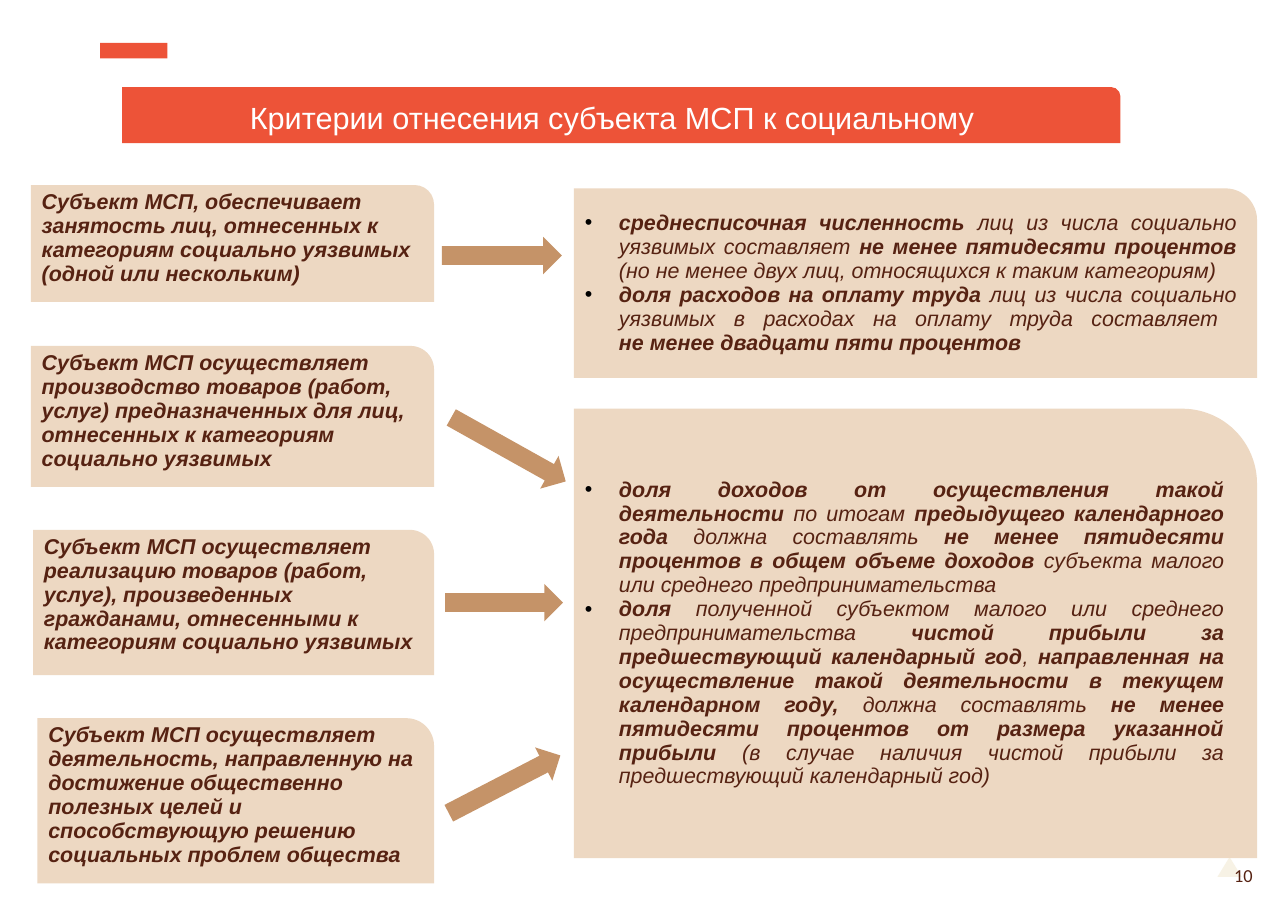
from dataclasses import dataclass

from lxml.etree import SubElement
from pptx import Presentation
from pptx.dml.color import RGBColor
from pptx.enum.shapes import MSO_SHAPE
from pptx.enum.text import MSO_ANCHOR, PP_ALIGN
from pptx.oxml.ns import qn
from pptx.util import Pt

PX = 9144


@dataclass(frozen=True)
class Theme:
    """Colours, fonts and type sizes of the slide."""
    accent: str = "ED5338"
    panel: str = "EDD8C2"
    arrow: str = "C59368"
    ink: str = "562212"
    light: str = "FFFFFF"
    bullet: str = "000000"
    ornament: str = "F7F2E5"
    font: str = "Arial"
    number_font: str = "Calibri"
    title_size: int = 20
    body_size: int = 14
    number_size: int = 12


THEME = Theme()

CRITERIA = [
    ((28, 168, 366, 106),
     "Субъект МСП, обеспечивает занятость лиц, отнесенных к категориям "
     "социально уязвимых (одной или нескольким)"),
    ((28, 314, 366, 128),
     "Субъект МСП осуществляет производство товаров (работ, услуг) "
     "предназначенных для лиц, отнесенных к категориям социально уязвимых"),
    ((30, 481, 364, 132),
     "Субъект МСП осуществляет реализацию товаров (работ, услуг), "
     "произведенных гражданами, отнесенными к категориям социально уязвимых"),
    ((34, 652, 360, 150),
     "Субъект МСП осуществляет деятельность, направленную на достижение "
     "общественно полезных целей и способствующую решению социальных "
     "проблем общества"),
]

CONDITIONS = [
    ((521, 171, 620, 172), [
        "**среднесписочная численность **лиц из числа социально уязвимых "
        "составляет** не менее пятидесяти процентов **(но не менее двух лиц, "
        "относящихся к таким категориям)",
        "**доля расходов на оплату труда **лиц из числа социально уязвимых "
        "в расходах на оплату труда составляет \n"
        "**не менее двадцати пяти процентов**",
    ]),
    ((521, 371, 620, 408), [
        "**доля доходов от осуществления такой деятельности **по итогам "
        "**предыдущего календарного года **должна составлять **не менее "
        "пятидесяти процентов в общем объеме доходов** субъекта малого или "
        "среднего предпринимательства",
        "**доля** полученной субъектом малого или среднего "
        "предпринимательства **чистой прибыли за предшествующий календарный "
        "год**, **направленная на осуществление такой деятельности в текущем "
        "календарном году, **должна составлять **не менее пятидесяти "
        "процентов от размера указанной прибыли **(в случае наличия чистой "
        "прибыли за предшествующий календарный год)",
    ]),
]

ARROWS = [
    ((401, 215, 109, 34), 0),
    ((402, 391, 119, 34), 29.2),
    ((404, 530, 107, 34), 0),
    ((401, 695, 114, 34), 332.6),
]


def emu(box):
    """Turn a box in px into EMU lengths."""
    return [v * PX for v in box]


def add_box(slide, kind, box, color, rotation=0):
    """Add a flat filled preset shape."""
    sp = slide.shapes.add_shape(kind, *emu(box))
    sp.shadow.inherit = False
    sp.fill.solid()
    sp.fill.fore_color.rgb = RGBColor.from_string(color)
    sp.line.fill.background()
    sp.rotation = rotation
    return sp


def add_bullet(p):
    """Give a paragraph a hanging round bullet."""
    pPr = p._p.get_or_add_pPr()
    pPr.set("marL", str(31 * PX))
    pPr.set("indent", str(-31 * PX))
    color = SubElement(pPr, qn("a:buClr"))
    SubElement(color, qn("a:srgbClr"), val=THEME.bullet)
    SubElement(pPr, qn("a:buFont"), typeface=THEME.font)
    SubElement(pPr, qn("a:buChar"), char="•")


def set_text(sp, paragraphs, size=THEME.body_size, color=THEME.ink,
             font=THEME.font, bold=False, italic=False, align=PP_ALIGN.LEFT,
             anchor=MSO_ANCHOR.TOP, spacing=None, bullets=False):
    """Fill a shape with paragraphs, where ** switches bold on and off."""
    tf = sp.text_frame
    tf.word_wrap = True
    tf.vertical_anchor = anchor
    for i, text in enumerate(paragraphs):
        p = tf.add_paragraph() if i else tf.paragraphs[0]
        if bullets:
            add_bullet(p)
        p.alignment = align
        p.line_spacing = spacing
        for j, span in enumerate(text.split("**")):
            for k, line in enumerate(span.split("\n")):
                if k:
                    p.add_line_break()
                if not line:
                    continue
                r = p.add_run()
                r.text = line
                r.font.name = font
                r.font.size = Pt(size)
                r.font.bold = bold or j % 2 == 1
                r.font.italic = italic
                r.font.color.rgb = RGBColor.from_string(color)


def add_label(slide, box, text, **fmt):
    """Add a centred one-line text box."""
    sp = slide.shapes.add_textbox(*emu(box))
    set_text(sp, [text], align=PP_ALIGN.CENTER, **fmt)


def add_panel(slide, box, paragraphs, **fmt):
    """Add a beige panel with one rounded corner and italic text."""
    sp = add_box(slide, MSO_SHAPE.ROUND_1_RECTANGLE, box, THEME.panel)
    set_text(sp, paragraphs, italic=True, spacing=0.93, **fmt)


def main():
    """Build the slide and save it."""
    prs = Presentation()
    prs.slide_width, prs.slide_height = emu((1169, 827))
    slide = prs.slides.add_slide(prs.slide_layouts[6])

    add_box(slide, MSO_SHAPE.ISOSCELES_TRIANGLE, (1105, 778, 22, 18),
            THEME.ornament)
    add_label(slide, (1103, 780, 51, 30), "10", size=THEME.number_size,
              font=THEME.number_font)
    add_box(slide, MSO_SHAPE.RECTANGLE, (91, 39, 61, 14), THEME.accent)
    add_box(slide, MSO_SHAPE.ROUND_1_RECTANGLE, (111, 79, 906, 51),
            THEME.accent)
    add_label(slide, (150, 83, 819, 47),
              "Критерии отнесения субъекта МСП к социальному ",
              size=THEME.title_size, color=THEME.light,
              anchor=MSO_ANCHOR.MIDDLE)

    for box, text in CRITERIA:
        add_panel(slide, box, [text], bold=True)
    for box, paragraphs in CONDITIONS:
        add_panel(slide, box, paragraphs, align=PP_ALIGN.JUSTIFY,
                  anchor=MSO_ANCHOR.MIDDLE, bullets=True)
    for box, rotation in ARROWS:
        add_box(slide, MSO_SHAPE.RIGHT_ARROW, box, THEME.arrow, rotation)

    prs.save("out.pptx")


if __name__ == "__main__":
    main()
